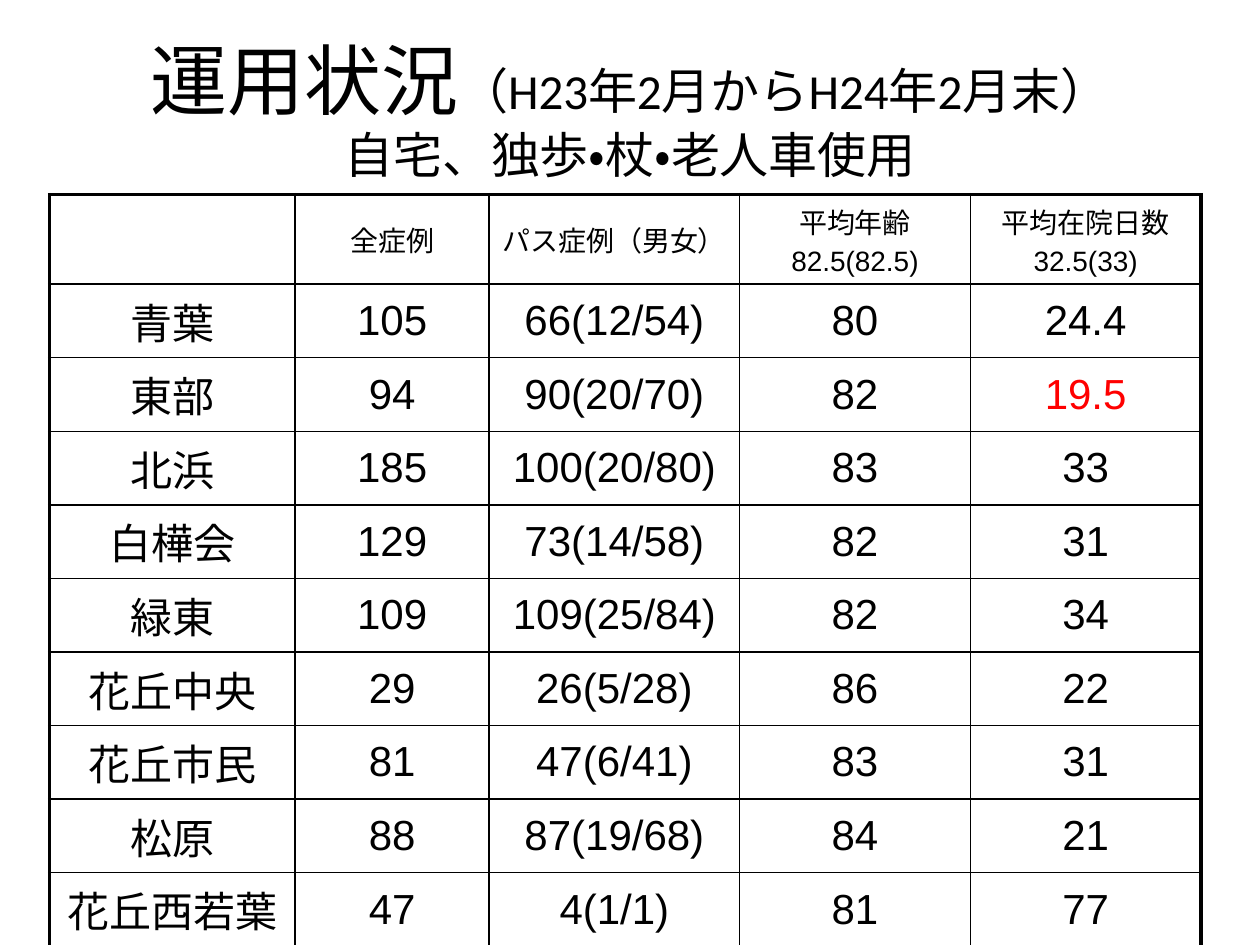
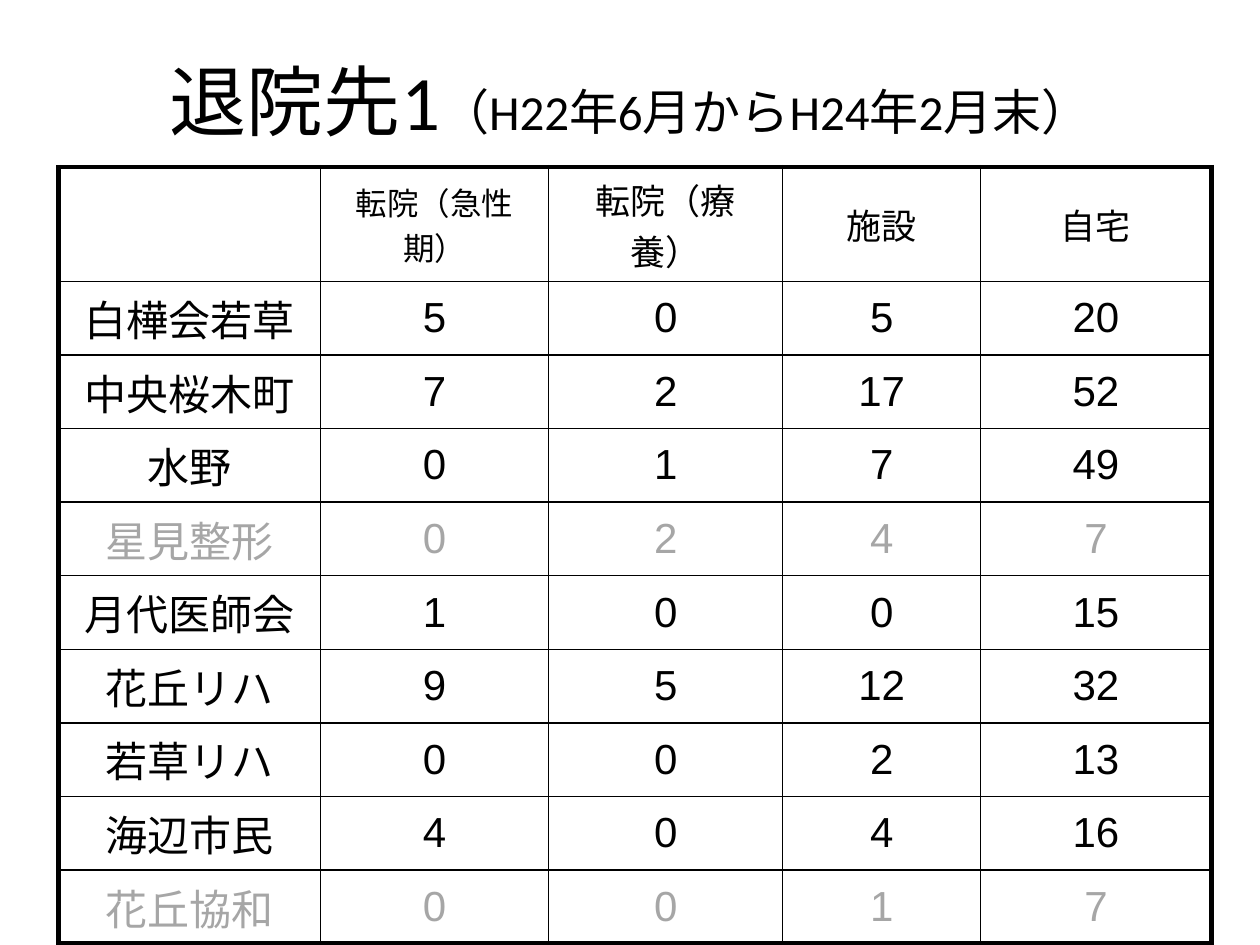
from lxml import etree
from pptx import Presentation
from pptx.dml.color import RGBColor
from pptx.enum.lang import MSO_LANGUAGE_ID
from pptx.enum.text import MSO_ANCHOR, MSO_AUTO_SIZE, PP_ALIGN
from pptx.oxml.ns import qn
from pptx.util import Cm, Pt

CENTER = PP_ALIGN.CENTER
MIDDLE = MSO_ANCHOR.MIDDLE
NO_AUTOFIT = MSO_AUTO_SIZE.NONE
JAPANESE = MSO_LANGUAGE_ID.JAPANESE

COLORS = {"text": "000000", "line": "000000", "accent": "FF0000", "muted": "A6A6A6"}
TITLE_FONT, TABLE_FONT = "Calibri", "Arial"
TITLE_PT, PERIOD_PT, BODY_PT = 44, 28, 24
THIN_PT = 1
ROW_CM = 1.48
TITLE_LEFT, TITLE_WIDTH, TITLE_HEIGHT = 1.27, 22.86, 3.18

STATUS = [
    ["", "全症例", "パス症例（男女）", "平均年齢\n82.5(82.5)", "平均在院日数\n32.5(33)"],
    ["青葉", "105", "66(12/54)", "80", "24.4"],
    ["東部", "94", "90(20/70)", "82", "19.5"],
    ["北浜", "185", "100(20/80)", "83", "33"],
    ["白樺会", "129", "73(14/58)", "82", "31"],
    ["緑東", "109", "109(25/84)", "82", "34"],
    ["花丘中央", "29", "26(5/28)", "86", "22"],
    ["花丘市民", "81", "47(6/41)", "83", "31"],
    ["松原", "88", "87(19/68)", "84", "21"],
    ["花丘西若葉", "47", "4(1/1)", "81", "77"],
]
DISCHARGE = [
    ["", "転院（急性期）", "転院（療養）", "施設", "自宅"],
    ["白樺会若草", "5", "0", "5", "20"],
    ["中央桜木町", "7", "2", "17", "52"],
    ["水野", "0", "1", "7", "49"],
    ["星見整形", "0", "2", "4", "7"],
    ["月代医師会", "1", "0", "0", "15"],
    ["花丘リハ", "9", "5", "12", "32"],
    ["若草リハ", "0", "0", "2", "13"],
    ["海辺市民", "4", "0", "4", "16"],
    ["花丘協和", "0", "0", "1", "7"],
]


def format_run(r, font, size, color="text"):
    r.font.name = font
    r.font.size = Pt(size)
    r.font.color.rgb = RGBColor.from_string(COLORS[color])
    r.font.language_id = JAPANESE


def add_title(s, top, heading, period_lines):
    """Large heading followed by smaller lines for the period and scope."""
    sp = s.shapes.title
    sp.left, sp.top = Cm(TITLE_LEFT), Cm(top)
    sp.width, sp.height = Cm(TITLE_WIDTH), Cm(TITLE_HEIGHT)
    tf = sp.text_frame
    tf.auto_size = NO_AUTOFIT
    tf.vertical_anchor = MIDDLE
    p = tf.paragraphs[0]
    p.alignment = CENTER
    r = p.add_run()
    r.text = heading
    format_run(r, TITLE_FONT, TITLE_PT)
    for i, line in enumerate(period_lines):
        if i:
            p.add_line_break()
        r = p.add_run()
        r.text = line
        format_run(r, TITLE_FONT, PERIOD_PT)


def set_borders(cell, widths):
    """Draw the left, right, top and bottom lines, in that order."""
    tc_pr = cell._tc.get_or_add_tcPr()
    for i, (side, width) in enumerate(zip("LRTB", widths)):
        ln = etree.Element(qn(f"a:ln{side}"), w=str(Pt(width)))
        fill = etree.SubElement(ln, qn("a:solidFill"))
        etree.SubElement(fill, qn("a:srgbClr"), val=COLORS["line"])
        tc_pr.insert(i, ln)


def fill_cell(cell, text, size, color):
    cell.fill.background()
    cell.vertical_anchor = MIDDLE
    tf = cell.text_frame
    tf.text = text
    for p in tf.paragraphs:
        p.alignment = CENTER
        space = etree.SubElement(p._p.get_or_add_pPr(), qn("a:spcBef"))
        etree.SubElement(space, qn("a:spcPct"), val="20000")
        for r in p.runs:
            format_run(r, TABLE_FONT, size, color)


def add_hospital_table(s, left, top, col_widths, header_height, rows,
                       header_sizes, frame_pt, bottom_pt, color_of):
    """Thin grid inside a heavier frame; color_of(row, col) names the text colour."""
    n_rows, n_cols = len(rows), len(col_widths)
    heights = [header_height] + [ROW_CM] * (n_rows - 1)
    table = s.shapes.add_table(n_rows, n_cols, Cm(left), Cm(top),
                               Cm(sum(col_widths)), Cm(sum(heights))).table
    table.first_row = table.horz_banding = False
    for col, width in zip(table.columns, col_widths):
        col.width = Cm(width)
    for row, height in zip(table.rows, heights):
        row.height = Cm(height)
    for i, values in enumerate(rows):
        for j, value in enumerate(values):
            cell = table.cell(i, j)
            size = BODY_PT if i else header_sizes[j]
            fill_cell(cell, value, size, color_of(i, j))
            set_borders(cell, [
                frame_pt if j == 0 else THIN_PT,
                frame_pt if j == n_cols - 1 else THIN_PT,
                frame_pt if i == 0 else THIN_PT,
                bottom_pt if i == n_rows - 1 else THIN_PT,
            ])


def build_status_slide(s):
    add_title(s, 0.58, "運用状況",
              ["（H23年2月からH24年2月末）", "自宅、独歩・杖・老人車使用"])
    add_hospital_table(
        s, 1, 3.92, [4.95, 3.91, 5.05, 4.65, 4.65], 1.8, STATUS,
        header_sizes=[16] * 5, frame_pt=2.25, bottom_pt=THIN_PT,
        color_of=lambda i, j: "accent" if STATUS[i][j] == "19.5" else "text")


def build_discharge_slide(s):
    muted = {"星見整形", "花丘協和"}
    add_title(s, 0.41, "退院先1", ["（H22年6月からH24年2月末）"])
    add_hospital_table(
        s, 1.18, 3.37, [5.28, 4.6, 4.72, 3.99, 4.65], 2.29, DISCHARGE,
        header_sizes=[18, 18, 20, 20, 20], frame_pt=3, bottom_pt=3,
        color_of=lambda i, j: "muted" if DISCHARGE[i][0] in muted else "text")


def main():
    prs = Presentation()
    prs.slide_width, prs.slide_height = Cm(25.4), Cm(19.05)
    title_only = prs.slide_layouts[5]
    for build in (build_status_slide, build_discharge_slide):
        build(prs.slides.add_slide(title_only))
    prs.save("out.pptx")


if __name__ == "__main__":
    main()
